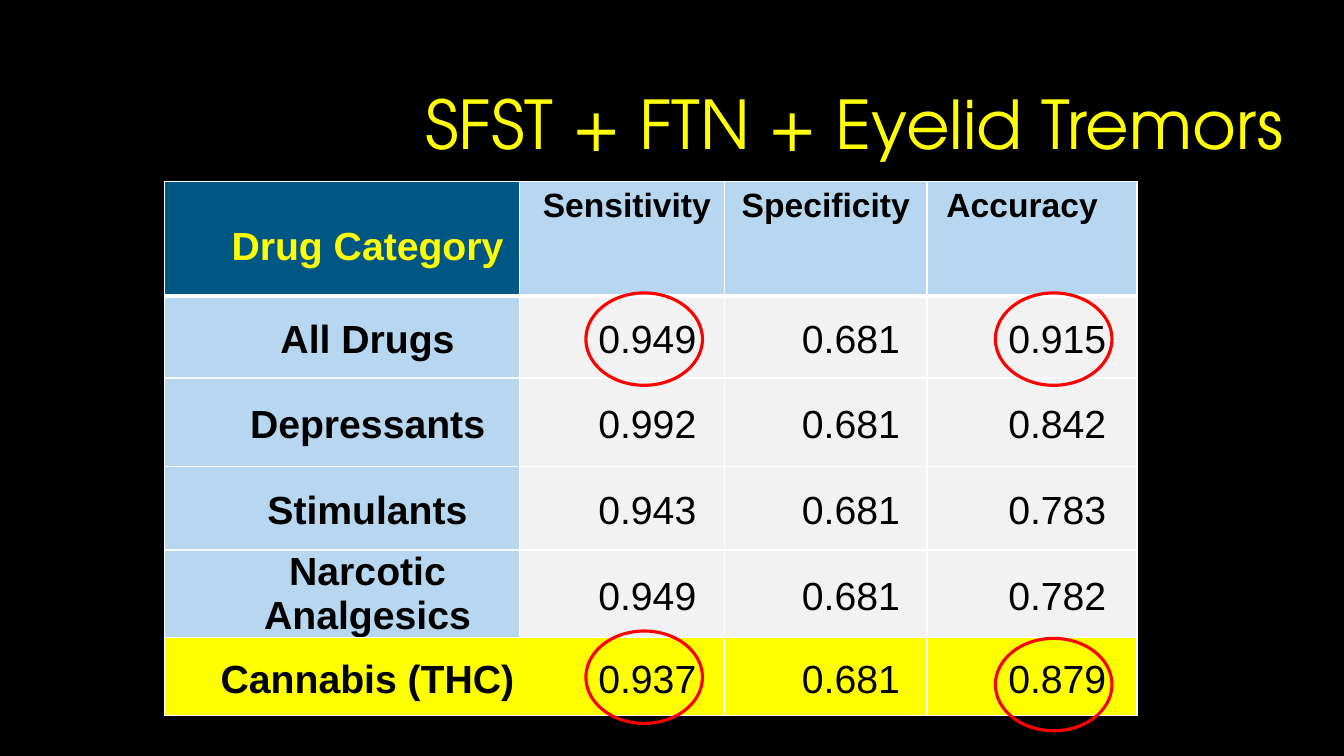
from lxml import etree
from pptx import Presentation
from pptx.dml.color import RGBColor
from pptx.enum.shapes import MSO_SHAPE
from pptx.enum.text import MSO_ANCHOR, PP_ALIGN
from pptx.oxml.ns import qn
from pptx.util import Emu, Pt

PX = 9525  # 96 px to the inch
OVAL = MSO_SHAPE.OVAL
TOP, MIDDLE = MSO_ANCHOR.TOP, MSO_ANCHOR.MIDDLE
CENTER, RIGHT = PP_ALIGN.CENTER, PP_ALIGN.RIGHT

COLORS = {
    "background": "000000", "highlight": "FFFF00", "corner": "015783",
    "label": "B7D7F1", "value": "F2F2F2", "text": "000000",
    "border": "FFFFFF", "ring": "FF0000",
}
COLUMN_WIDTHS = [338, 195, 193, 200]
ROW_HEIGHTS = [109, 78, 84, 80, 81, 74]
ROWS = [
    ["Drug Category", "Sensitivity", "Specificity", "Accuracy"],
    ["All Drugs", "0.949", "0.681", "0.915"],
    ["Depressants", "0.992", "0.681", "0.842"],
    ["Stimulants", "0.943", "0.681", "0.783"],
    ["Narcotic Analgesics", "0.949", "0.681", "0.782"],
    ["Cannabis (THC)", "0.937", "0.681", "0.879"],
]
# Left, right and top insets of the header cells
HEADER_INSETS = [(48, 0, 41), (9, 0, 0), (0, 0, 0), (0, 19, 0)]
# Left and top of each ring, relative to the table
RINGS = [(401, 106), (401, 428), (791, 106), (791, 435)]


def px(length):
    return Emu(length * PX)


def color(name):
    return RGBColor.from_string(COLORS[name])


def write(paragraph, text, size, font_name, color_name, bold=False):
    run = paragraph.add_run()
    run.text = text
    run.font.size = Pt(size)
    run.font.name = font_name
    run.font.bold = bold
    run.font.color.rgb = color(color_name)


def add_title(slide, left, top, width, height):
    title = slide.shapes.title
    title.left, title.top, title.width, title.height = map(px, (left, top, width, height))
    frame = title.text_frame
    frame.word_wrap = True
    frame.vertical_anchor = MIDDLE
    paragraph = frame.paragraphs[0]
    paragraph.alignment = RIGHT
    paragraph.line_spacing = 0.9
    write(paragraph, "SFST + FTN + Eyelid Tremors", 48, "TeX Gyre Adventor", "highlight")


def set_borders(cell, row):
    widths = {"lnL": 1, "lnR": 1, "lnT": 3 if row == 1 else 1, "lnB": 3 if row == 0 else 1}
    properties = cell._tc.get_or_add_tcPr()
    for tag, width in widths.items():
        line = etree.SubElement(properties, qn("a:" + tag), w=str(Pt(width)))
        fill = etree.SubElement(line, qn("a:solidFill"))
        etree.SubElement(fill, qn("a:srgbClr"), val=COLORS["border"])


def format_cell(cell, row, column, text):
    header, corner = row == 0, row == column == 0
    set_borders(cell, row)
    if row == len(ROWS) - 1:
        fill_name = "highlight"
    elif corner:
        fill_name = "corner"
    else:
        fill_name = "label" if header or column == 0 else "value"
    cell.fill.solid()
    cell.fill.fore_color.rgb = color(fill_name)

    left, right, top = HEADER_INSETS[column] if header else (48, 0, 0)
    cell.margin_left, cell.margin_right, cell.margin_top = px(left), px(right), px(top)
    cell.margin_bottom = 0
    cell.vertical_anchor = TOP if header else MIDDLE
    paragraph = cell.text_frame.paragraphs[0]
    paragraph.alignment = CENTER
    paragraph.line_spacing = 1.0 if corner or text == "Narcotic Analgesics" else 1.15
    write(paragraph, text, 24 if header and not corner else 28, "Arial",
          "highlight" if corner else "text", bold=header or column == 0)


def add_results_table(slide, left, top):
    # Table
    table = slide.shapes.add_table(
        len(ROWS), len(COLUMN_WIDTHS), px(left), px(top),
        px(sum(COLUMN_WIDTHS)), px(sum(ROW_HEIGHTS))).table
    for column, width in zip(table.columns, COLUMN_WIDTHS):
        column.width = px(width)
    for row, height in zip(table.rows, ROW_HEIGHTS):
        row.height = px(height)
    for row, texts in enumerate(ROWS):
        for column, text in enumerate(texts):
            format_cell(table.cell(row, column), row, column, text)

    # Rings around the key values
    for x, y in RINGS:
        ring = slide.shapes.add_shape(OVAL, px(left + x), px(top + y), px(111), px(88))
        ring.shadow.inherit = False
        ring.fill.background()
        ring.line.color.rgb = color("ring")
        ring.line.width = Pt(2.25)


def main():
    presentation = Presentation()
    presentation.slide_width, presentation.slide_height = px(1280), px(720)
    slide = presentation.slides.add_slide(presentation.slide_layouts[5])
    slide.background.fill.solid()
    slide.background.fill.fore_color.rgb = color("background")
    add_title(slide, 294, 54, 938, 135)
    add_results_table(slide, 157, 173)
    presentation.save("out.pptx")


if __name__ == "__main__":
    main()
